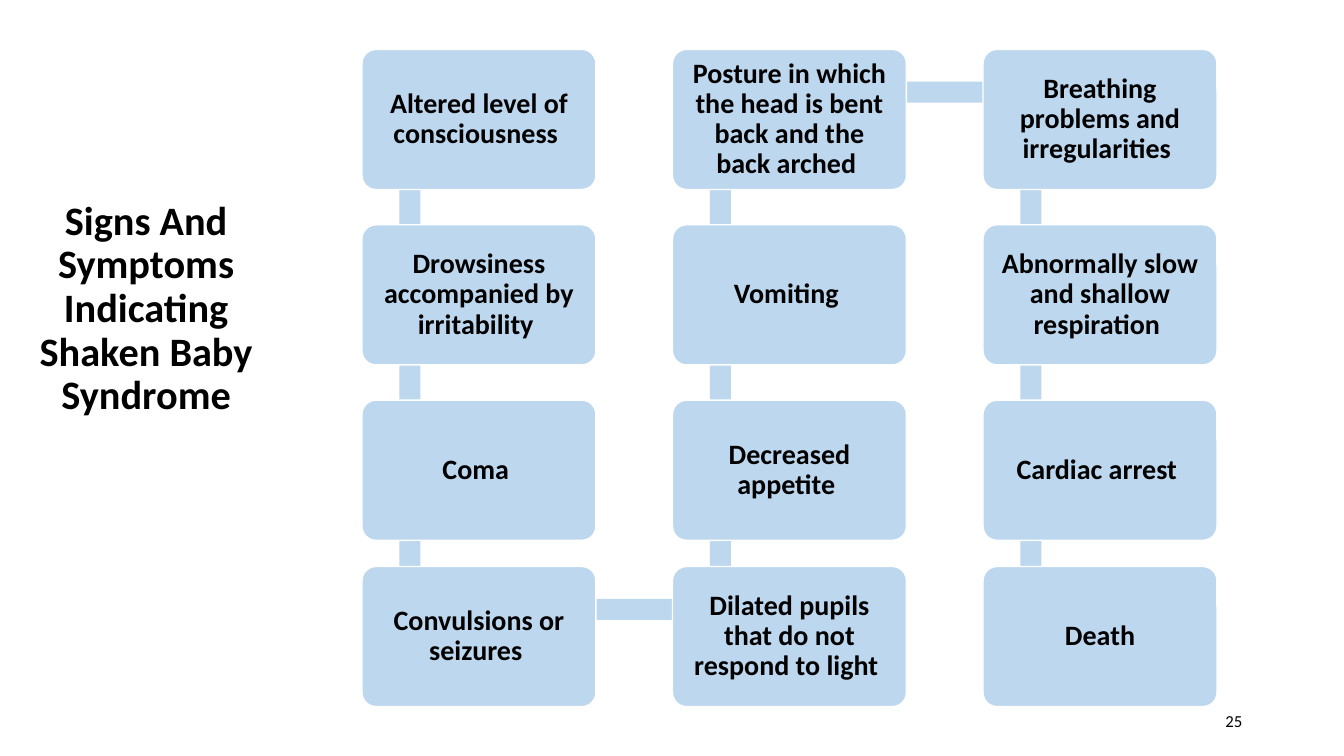
import pptx
import pptx.dml.color
import pptx.enum.shapes
import pptx.enum.text
import pptx.util

TITLE = "Signs And Symptoms Indicating Shaken Baby Syndrome"
PAGE_NUMBER = "25"
# Each column is listed from top to bottom.
SIGN_COLUMNS = [
    ["Altered level of consciousness ", "Drowsiness accompanied by irritability ",
     "Coma ", "Convulsions or seizures "],
    ["Posture in which the head is bent back and the back arched ", "Vomiting ",
     "Decreased appetite ", "Dilated pupils that do not respond to light "],
    ["Breathing problems and irregularities ", "Abnormally slow and shallow respiration ",
     "Cardiac arrest ", "Death"],
]

BLACK = pptx.dml.color.RGBColor(0x00, 0x00, 0x00)
WHITE = pptx.dml.color.RGBColor(0xFF, 0xFF, 0xFF)
LIGHT_BLUE = pptx.dml.color.RGBColor(0xBD, 0xD7, 0xEE)
FONT = "Calibri"
SHAPES = pptx.enum.shapes.MSO_SHAPE
ALIGN = pptx.enum.text.PP_ALIGN

EMU_PER_PX = 9144  # 100 px to the inch
SLIDE_SIZE = (1333, 750)
TITLE_AREA = (0, 194, 290, 226)
NUMBER_AREA = (942, 695, 300, 40)
FIRST_COLUMN, COLUMN_STEP = 359, 308
ROW_TOPS = [49, 223, 397, 562]
BOX_WIDTH, BOX_HEIGHT = 232, 139
BOX_MARGIN = 12
LINK_THICKNESS = 21
LINK_X, LINK_Y = 37, 32  # offsets of the links inside a box
LINK_START = 45  # links begin and end this far inside a box


def px(*lengths):
    return [pptx.util.Emu(length * EMU_PER_PX) for length in lengths]


def write(shape, text, size, bold=True, alignment=ALIGN.CENTER, line_spacing=0.9):
    frame = shape.text_frame
    frame.text = text
    frame.word_wrap = True
    frame.auto_size = pptx.enum.text.MSO_AUTO_SIZE.NONE
    frame.vertical_anchor = pptx.enum.text.MSO_ANCHOR.MIDDLE
    paragraph = frame.paragraphs[0]
    paragraph.alignment = alignment
    paragraph.line_spacing = line_spacing
    font = paragraph.runs[0].font
    font.name, font.size, font.bold = FONT, pptx.util.Pt(size), bold
    font.color.rgb = BLACK


def add_blue_shape(slide, kind, area):
    shape = slide.shapes.add_shape(kind, *px(*area))
    shape.shadow.inherit = False
    shape.fill.solid()
    shape.fill.fore_color.rgb = LIGHT_BLUE
    shape.line.fill.background()
    return shape


def add_box(slide, left, top, text):
    box = add_blue_shape(slide, SHAPES.ROUNDED_RECTANGLE, (left, top, BOX_WIDTH, BOX_HEIGHT))
    box.adjustments[0] = 0.1
    box.line.color.rgb = WHITE
    box.line.width = pptx.util.Pt(1)
    frame = box.text_frame
    (frame.margin_left, frame.margin_right,
     frame.margin_top, frame.margin_bottom) = px(*[BOX_MARGIN] * 4)
    write(box, text, 20)


def add_links(slide, column_lefts):
    """Join the boxes in one path: down, across, up, across, down."""
    for left in column_lefts:
        for top, next_top in zip(ROW_TOPS, ROW_TOPS[1:]):
            add_blue_shape(slide, SHAPES.RECTANGLE,
                           (left + LINK_X, top + LINK_START, LINK_THICKNESS, next_top - top))
    for left, top in zip(column_lefts, (ROW_TOPS[-1], ROW_TOPS[0])):
        add_blue_shape(slide, SHAPES.RECTANGLE,
                       (left + LINK_START, top + LINK_Y, COLUMN_STEP, LINK_THICKNESS))


def main():
    presentation = pptx.Presentation()
    presentation.slide_width, presentation.slide_height = px(*SLIDE_SIZE)
    slide = presentation.slides.add_slide(presentation.slide_layouts[5])

    title = slide.shapes.title
    title.left, title.top, title.width, title.height = px(*TITLE_AREA)
    write(title, TITLE, 28.8)

    column_lefts = [FIRST_COLUMN + COLUMN_STEP * index for index in range(len(SIGN_COLUMNS))]
    add_links(slide, column_lefts)
    for left, signs in zip(column_lefts, SIGN_COLUMNS):
        for top, sign in zip(ROW_TOPS, signs):
            add_box(slide, left, top, sign)

    page_number = slide.shapes.add_textbox(*px(*NUMBER_AREA))
    write(page_number, PAGE_NUMBER, 12, bold=False, alignment=ALIGN.RIGHT, line_spacing=1.0)

    presentation.save("out.pptx")


if __name__ == "__main__":
    main()
